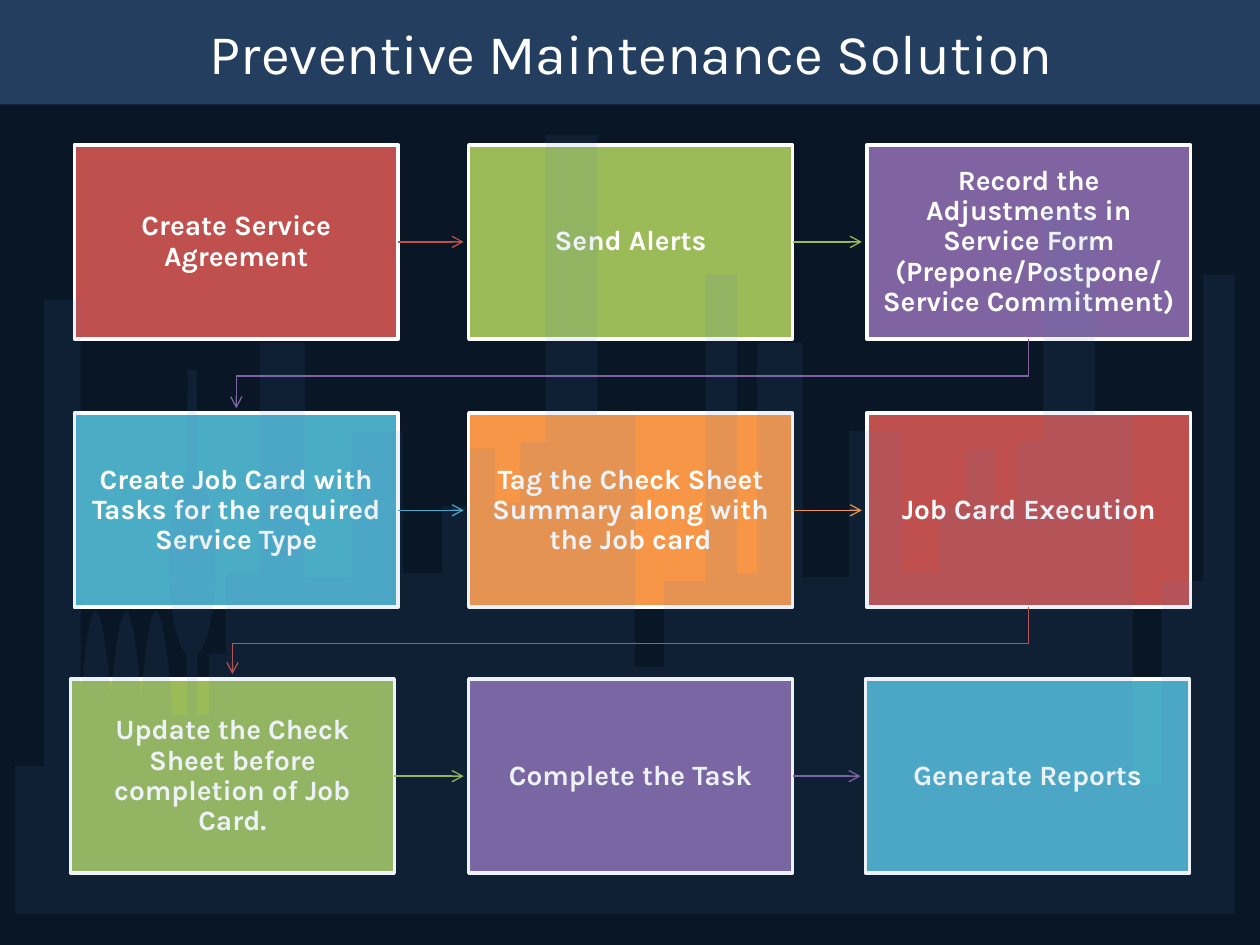
"""Build the preventive maintenance process slide."""
from dataclasses import dataclass
from itertools import cycle
from math import cos, radians, sin

from lxml import etree
from pptx import Presentation
from pptx.dml.color import RGBColor
from pptx.enum import shapes, text
from pptx.oxml.ns import qn
from pptx.util import Inches, Pt

FONT = "Karla"
WHITE = RGBColor(0xFF, 0xFF, 0xFF)
NAVY = RGBColor(0x09, 0x16, 0x25)
STEEL = RGBColor(0x4F, 0x81, 0xBD)
RED = RGBColor(0xC0, 0x50, 0x4D)
GREEN = RGBColor(0x9B, 0xBB, 0x59)
PURPLE = RGBColor(0x80, 0x64, 0xA2)
BLUE = RGBColor(0x4B, 0xAC, 0xC6)
ORANGE = RGBColor(0xF7, 0x96, 0x46)

CARD_WIDTH, CARD_HEIGHT = 2.57, 1.54
ARROW_GAP = 0.04
COLUMNS = (0.59, 3.72, 6.88)
LAST_COLUMNS = (0.56, 3.72, 6.87)
ROWS = ((1.15, COLUMNS), (3.28, COLUMNS), (5.39, LAST_COLUMNS))
STEPS = (
    "Create Service Agreement",
    "Send Alerts",
    "Record the Adjustments in Service Form (Prepone/Postpone/ Service Commitment)",
    "Create Job Card with Tasks for the required Service Type",
    "Tag the Check Sheet Summary along with the Job card",
    "Job Card Execution",
    "Update the Check Sheet before completion of Job Card.",
    "Complete the Task",
    "Generate Reports",
)

BLOCK_SHIFT = 3.95
BLOCK = ((2.06, 2.72), (2.42, 4.58), (2.79, 3.42), (3.2, 4.55), (3.51, 4.02),
         (3.72, 3.56), (3.93, 3.99), (4.13, 3.51))


@dataclass
class Card:
    label: str
    left: float
    top: float
    color: RGBColor

    @property
    def center(self) -> float:
        return self.left + CARD_WIDTH / 2

    @property
    def middle(self) -> float:
        return self.top + CARD_HEIGHT / 2

    @property
    def bottom(self) -> float:
        return self.top + CARD_HEIGHT


def tint(shape, color: RGBColor, opacity: int) -> None:
    shape.shadow.inherit = False
    shape.fill.solid()
    shape.fill.fore_color.rgb = color
    shape.line.fill.background()
    swatch = shape.element.spPr.find(".//" + qn("a:srgbClr"))
    etree.SubElement(swatch, qn("a:alpha"), val=str(opacity * 1000))


def add_path(page, points: list, close: bool):
    corners = [(Inches(x), Inches(y)) for x, y in points]
    builder = page.shapes.build_freeform(*corners[0])
    builder.add_line_segments(corners[1:], close=close)
    return builder.convert_to_shape()


def style_arrow(arrow, color: RGBColor) -> None:
    arrow.line.color.rgb = color
    arrow.line.width = Pt(0.75)
    etree.SubElement(arrow.element.spPr.get_or_add_ln(), qn("a:tailEnd"), type="arrow")


def format_text(para, size: int, bold: bool) -> None:
    para.alignment = text.PP_ALIGN.CENTER
    para.font.name = FONT
    para.font.size = Pt(size)
    para.font.bold = bold
    para.font.color.rgb = WHITE


def add_heading(page) -> None:
    banner = page.shapes.add_shape(
        shapes.MSO_SHAPE.RECTANGLE, 0, 0, Inches(10.02), Inches(0.83))
    tint(banner, STEEL, 38)
    title = page.shapes.title
    banner.element.addnext(title.element)
    title.left, title.top = Inches(1.24), Inches(0.1)
    title.width, title.height = Inches(7.55), Inches(0.64)
    frame = title.text_frame
    frame.text = "Preventive Maintenance Solution"
    frame.auto_size = text.MSO_AUTO_SIZE.NONE
    frame.vertical_anchor = text.MSO_ANCHOR.TOP
    format_text(frame.paragraphs[0], 32, False)


def add_card(page, card: Card):
    box = page.shapes.add_shape(
        shapes.MSO_SHAPE.RECTANGLE, Inches(card.left), Inches(card.top),
        Inches(CARD_WIDTH), Inches(CARD_HEIGHT))
    box.shadow.inherit = False
    box.fill.solid()
    box.fill.fore_color.rgb = card.color
    box.line.color.rgb = WHITE
    box.line.width = Pt(2)
    frame = box.text_frame
    frame.word_wrap = True
    frame.vertical_anchor = text.MSO_ANCHOR.MIDDLE
    frame.margin_left = frame.margin_right = Inches(0.12)
    frame.margin_top = frame.margin_bottom = Inches(0.12)
    frame.text = card.label
    para = frame.paragraphs[0]
    para.line_spacing = 0.9
    format_text(para, 16, True)
    return box


def add_row_arrow(page, box, start: Card, end: Card) -> None:
    arrow = page.shapes.add_connector(
        shapes.MSO_CONNECTOR.STRAIGHT, Inches(start.left + CARD_WIDTH),
        Inches(start.middle), Inches(end.left - ARROW_GAP), Inches(end.middle))
    arrow.begin_connect(box, 3)
    style_arrow(arrow, start.color)
    etree.SubElement(arrow.element.spPr, qn("a:effectLst"))


def add_return_arrow(page, start: Card, end: Card) -> None:
    turn = (start.bottom + end.top) / 2
    arrow = add_path(page, [
        (start.center, start.bottom), (start.center, turn),
        (end.center, turn), (end.center, end.top - ARROW_GAP)], False)
    arrow.shadow.inherit = False
    arrow.fill.background()
    style_arrow(arrow, start.color)


def roofline(roofs: list, end: float) -> list:
    edges = [x for x, _ in roofs[1:]] + [end]
    return [point for (x, y), edge in zip(roofs, edges)
            for point in ((x, y), (edge, y))]


def tower_block(shift: float, tower: float, gap: float) -> list:
    roofs = (*BLOCK, (4.33, tower), (4.74, 3.29), (5.04, gap), (5.27, 4.61), (5.6, 2.18))
    return roofline([(x + shift, y) for x, y in roofs], 5.85 + shift)


def add_skyline(page) -> None:
    points = [(0.12, 7.25)] + roofline([(0.12, 6.08), (0.35, 2.38)], 0.64)
    points += [(peak + 0.02 * step, 4.85 + 0.67 * (step / 6) ** 2)
               for peak in (0.76, 1.0, 1.24) for step in range(-6, 7)]
    points += [(1.37, 5.67), (1.49, 5.67)]
    leaf = [(0.18 * cos(radians(angle)), 4.48 + 0.73 * sin(radians(angle)))
            for angle in range(78, -79, -6)]
    points += [(1.52 - x, y) for x, y in leaf]
    points += [(1.49, 2.94), (1.56, 2.94)]
    points += [(1.53 + x, y) for x, y in reversed(leaf)]
    points += roofline([(1.56, 5.67), (1.66, 5.19), (1.79, 4.55)], 2.06)
    points += tower_block(0, 1.07, 5.29)
    points += [(5.85, 4.55), (6.01, 4.55)]
    points += tower_block(BLOCK_SHIFT, 1.68, 6.23)
    points.append((9.8, 7.25))
    tint(add_path(page, points, True), STEEL, 10)


def main() -> None:
    deck = Presentation()
    deck.slide_width, deck.slide_height = Inches(10), Inches(7.5)
    page = deck.slides.add_slide(deck.slide_layouts[5])
    page.background.fill.solid()
    page.background.fill.fore_color.rgb = NAVY
    add_heading(page)
    places = [(left, top) for top, columns in ROWS for left in columns]
    colors = cycle((RED, GREEN, PURPLE, BLUE, ORANGE))
    cards = [Card(label, left, top, color)
             for label, (left, top), color in zip(STEPS, places, colors)]
    boxes = [add_card(page, card) for card in cards]
    for box, start, end in zip(boxes, cards, cards[1:]):
        if start.top == end.top:
            add_row_arrow(page, box, start, end)
        else:
            add_return_arrow(page, start, end)
    add_skyline(page)
    deck.save("out.pptx")


if __name__ == "__main__":
    main()
